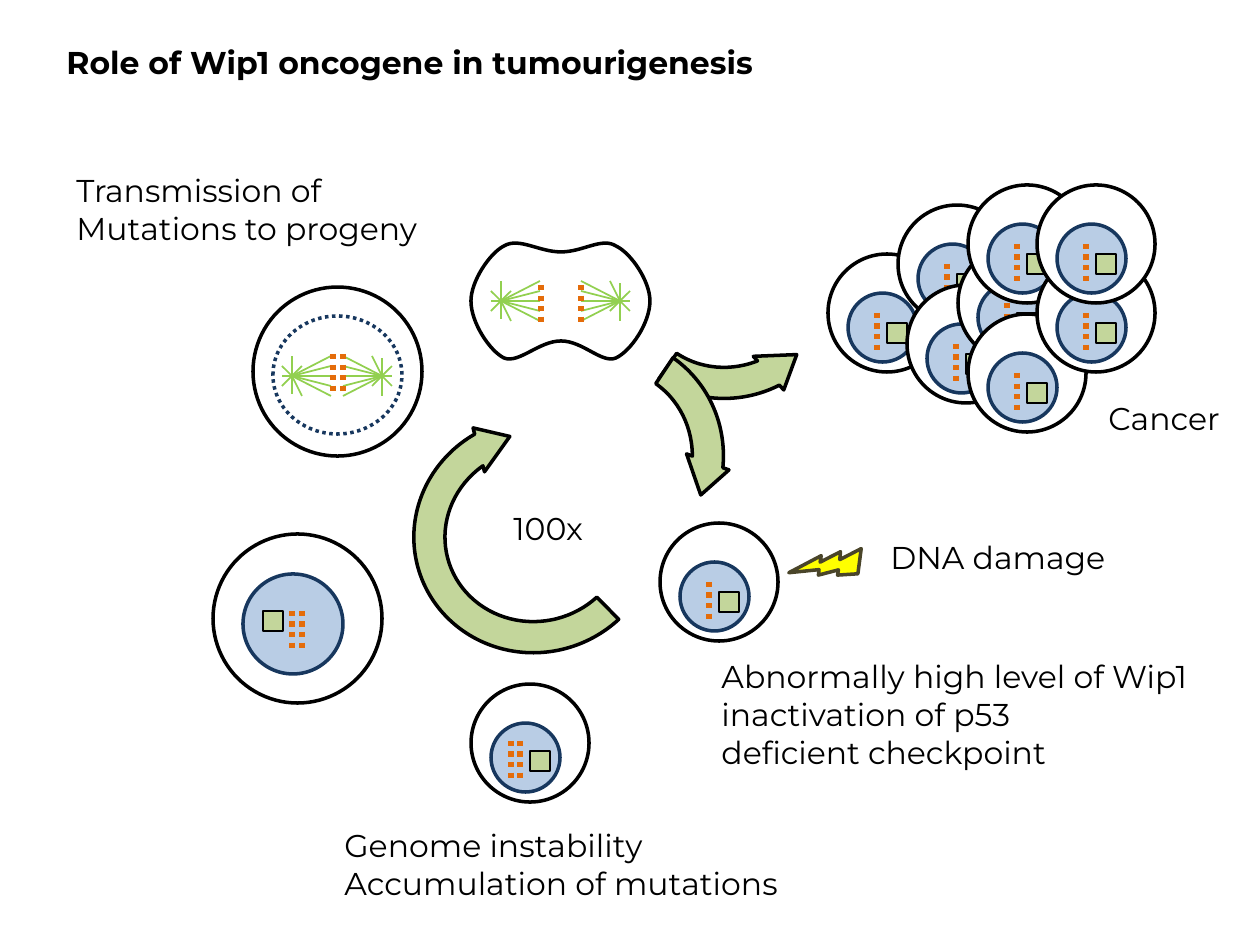
from lxml import etree
from pptx import Presentation
from pptx.dml.color import RGBColor
from pptx.enum.dml import MSO_LINE as DASH
from pptx.enum.shapes import MSO_CONNECTOR as CONN, MSO_SHAPE as SHAPE
from pptx.enum.text import MSO_AUTO_SIZE as AUTO
from pptx.oxml.ns import qn
from pptx.util import Emu, Pt

SCALE = 914400 / 126
FONT = "Montserrat"
BLACK = RGBColor(0x00, 0x00, 0x00)
WHITE = RGBColor(0xFF, 0xFF, 0xFF)
NAVY = RGBColor(0x17, 0x37, 0x5E)
PALE_BLUE = RGBColor(0xB9, 0xCD, 0xE5)
PALE_GREEN = RGBColor(0xC3, 0xD6, 0x9B)
FIBRE_GREEN = RGBColor(0x92, 0xD0, 0x50)
ORANGE = RGBColor(0xE4, 0x6C, 0x0A)
YELLOW = RGBColor(0xFF, 0xFF, 0x00)
BROWN = RGBColor(0x4A, 0x45, 0x2A)

FIBRES = [(39, 0), (39, 10), (39, -10), (39, 20), (39, -20)]
ASTERS = [(0, 18), (-10, 0), (10, 20), (-10, 10), (-10, -10), (0, -20), (10, -10)]
TUMOUR = [(828, 254), (898, 205), (907, 285), (958, 244),
          (968, 185), (968, 314), (1037, 254), (1037, 185)]
DIVIDING_CURVES = [
    [(471, 281), (490, 253), (504, 246)], [(519, 237), (539, 252), (561, 252)],
    [(583, 252), (602, 237), (616, 246)], [(631, 253), (650, 281), (650, 301)],
    [(650, 323), (631, 351), (616, 358)], [(602, 364), (583, 341), (561, 341)],
    [(539, 341), (519, 364), (504, 358)], [(490, 351), (471, 323), (471, 301)],
]


def px(n):
    """Turn pixels into EMU."""
    return Emu(round(n * SCALE))


def style(s, fill, line, width=2):
    """Set fill and outline, and remove the shadow."""
    s.shadow.inherit = False
    if fill is None:
        s.fill.background()
    else:
        s.fill.solid()
        s.fill.fore_color.rgb = fill
    s.line.color.rgb = line
    s.line.width = Pt(width)


def add_preset(slide, kind, x, y, w, h, fill, line, width=2, rot=0):
    """Add a preset shape."""
    s = slide.shapes.add_shape(kind, px(x), px(y), px(w), px(h))
    style(s, fill, line, width)
    s.rotation = rot
    return s


def add_circle(slide, x, y, d, fill, line):
    """Add a circle by its top left corner and diameter."""
    return add_preset(slide, SHAPE.OVAL, x, y, d, d, fill, line)


def add_line(slide, x1, y1, x2, y2, color, width):
    """Add a straight line without shadow."""
    c = slide.shapes.add_connector(CONN.STRAIGHT, px(x1), px(y1), px(x2), px(y2))
    c.line.color.rgb = color
    c.line.width = Pt(width)
    etree.SubElement(c.element.spPr, qn("a:effectLst"))
    return c


def add_chromosome(slide, x, y):
    """Add a dotted vertical chromosome."""
    add_line(slide, x, y, x, y + 40, ORANGE, 3).line.dash_style = DASH.ROUND_DOT


def add_spindle(slide, x, y, side):
    """Add a spindle pole whose fibres point to the given side (1 or -1)."""
    for dx, dy in FIBRES + ASTERS:
        add_line(slide, x, y, x + side * dx, y + side * dy, FIBRE_GREEN, 1)


def add_cell(slide, x, y, d=118, nucleus=(20, 39, 69),
             chromosomes=((49, 59),), mutation=(59, 69)):
    """Add a cell with nucleus, chromosomes and a mutation square."""
    add_circle(slide, x, y, d, WHITE, BLACK)
    nx, ny, nd = nucleus
    add_circle(slide, x + nx, y + ny, nd, PALE_BLUE, NAVY)
    for cx, cy in chromosomes:
        add_chromosome(slide, x + cx, y + cy)
    mx, my = mutation
    add_preset(slide, SHAPE.RECTANGLE, x + mx, y + my, 20, 20, PALE_GREEN, BLACK, 1.5)


def add_dividing_cell(slide):
    """Add the pinched outline of the dividing cell as Bézier curves."""
    start = DIVIDING_CURVES[-1][-1]
    builder = slide.shapes.build_freeform(*start, scale=SCALE)
    builder.add_line_segments([curve[-1] for curve in DIVIDING_CURVES], close=True)
    s = builder.convert_to_shape()
    style(s, WHITE, BLACK)
    left = min(curve[-1][0] for curve in DIVIDING_CURVES)
    top = min(curve[-1][1] for curve in DIVIDING_CURVES)
    segments = list(s.element.iter(qn("a:lnTo")))
    for segment, curve in zip(segments, DIVIDING_CURVES):
        bezier = etree.Element(qn("a:cubicBezTo"))
        for x, y in curve:
            etree.SubElement(bezier, qn("a:pt"), x=str(x - left), y=str(y - top))
        segment.getparent().replace(segment, bezier)


def add_cycle_arrow(slide, x, y, rot, start, flip=False):
    """Add a circular arrow that begins at the given angle adjustment."""
    s = add_preset(slide, SHAPE.CIRCULAR_ARROW, x, y, 249, 258,
                   PALE_GREEN, BLACK, rot=rot)
    for i, value in enumerate((0.125, 11.423, 204.577, start, 0.091)):
        s.adjustments[i] = value
    if flip:
        s.element.spPr.find(qn("a:xfrm")).set("flipH", "1")


def add_label(slide, x, y, w, h, lines, bold=False, wrap=False):
    """Add a text box with one paragraph per line."""
    tf = slide.shapes.add_textbox(px(x), px(y), px(w), px(h)).text_frame
    tf.word_wrap = wrap
    tf.auto_size = AUTO.SHAPE_TO_FIT_TEXT
    for i, line in enumerate(lines):
        p = tf.add_paragraph() if i else tf.paragraphs[0]
        r = p.add_run()
        r.text = line
        r.font.name = FONT
        r.font.size = Pt(18)
        r.font.bold = bold
        r.font.color.rgb = BLACK


def main():
    """Build the slide."""
    prs = Presentation()
    prs.slide_width, prs.slide_height = px(1260), px(945)
    slide = prs.slides.add_slide(prs.slide_layouts[6])

    add_dividing_cell(slide)
    add_cell(slide, 213, 534, 169, (30, 40, 100), ((79, 77), (89, 77)), (50, 77))
    add_cell(slide, 471, 684, chromosomes=((40, 57), (49, 57)), mutation=(59, 67))
    add_circle(slide, 253, 287, 169, WHITE, BLACK)
    for x, y, side in ((501, 301, 1), (620, 301, -1), (292, 376, 1), (382, 376, -1)):
        add_spindle(slide, x, y, side)
    envelope = add_preset(slide, SHAPE.OVAL, 273, 316, 129, 118, None, NAVY)
    envelope.line.dash_style = DASH.ROUND_DOT
    for x, y in ((333, 354), (343, 354), (541, 285), (581, 285)):
        add_chromosome(slide, x, y)

    add_cycle_arrow(slide, 411, 406, 255.4, 89.97)
    add_cycle_arrow(slide, 604, 150, 227.9, 169.815, flip=True)
    add_cycle_arrow(slide, 481, 330, 20.7, 169.815)
    add_preset(slide, SHAPE.LIGHTNING_BOLT, 800, 534, 59, 59, YELLOW, BROWN, rot=122.2)
    for x, y in [(660, 523)] + TUMOUR:
        add_cell(slide, x, y)

    add_label(slide, 54, 37, 747, 50, ["Role of Wip1 oncogene in tumourigenesis"], bold=True)
    add_label(slide, 64, 165, 394, 89, ["Transmission of", "Mutations to progeny"])
    add_label(slide, 501, 503, 111, 50, ["100x"])
    add_label(slide, 878, 532, 249, 50, ["DNA damage"])
    add_label(slide, 1096, 393, 149, 50, ["Cancer"])
    add_label(slide, 709, 651, 551, 127, ["Abnormally high level of Wip1", "inactivation of p53",
                                          "deficient checkpoint"], wrap=True)
    add_label(slide, 332, 820, 496, 89, ["Genome instability", "Accumulation of mutations"])
    prs.save("out.pptx")


if __name__ == "__main__":
    main()
